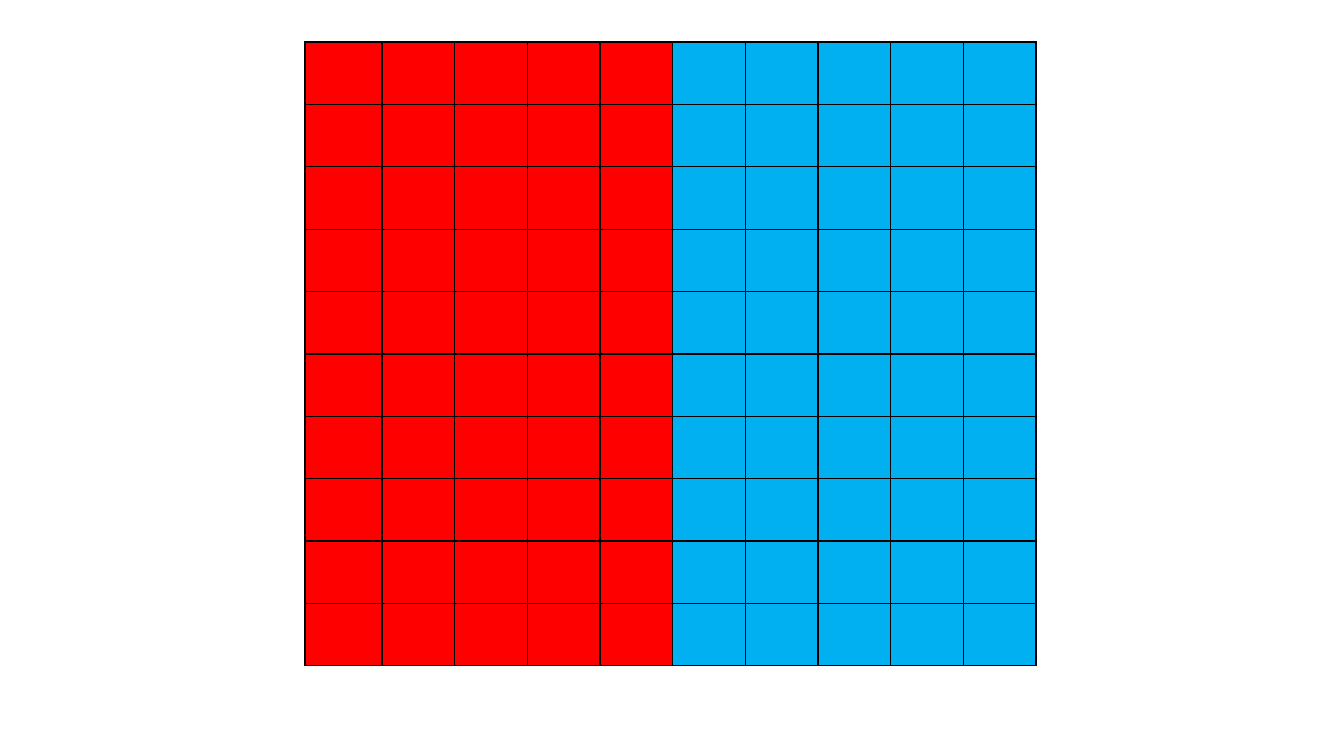
from lxml import etree
from pptx import Presentation
from pptx import util as u
from pptx.dml.color import RGBColor
from pptx.oxml import ns

RED = RGBColor(0xFF, 0x00, 0x00)
BLUE = RGBColor(0x00, 0xB0, 0xF0)
BLACK = RGBColor(0x00, 0x00, 0x00)
SIZE = 10
FIRST = 77


def px(n):
    """Turn pixels into EMU."""
    return u.Emu(round(n * 914400 / 100.8))


def edge(cell):
    """Draw a one-point black line on all four sides of a cell."""
    props = cell._tc.get_or_add_tcPr()
    for spot, side in enumerate(("a:lnL", "a:lnR", "a:lnT", "a:lnB")):
        line = etree.Element(ns.qn(side), w=str(u.Pt(1)))
        fill = etree.SubElement(line, ns.qn("a:solidFill"))
        etree.SubElement(fill, ns.qn("a:srgbClr"), val=str(BLACK))
        props.insert(spot, line)


def grid(slide, left, top, width, height):
    """Place the square table, its left half red and its right half blue."""
    frame = slide.shapes.add_table(SIZE, SIZE, px(left), px(top), px(width), px(height))
    table = frame.table
    table.first_row = table.horz_banding = False
    for col in table.columns:
        col.width = px((width - FIRST) / (SIZE - 1))
    table.columns[0].width = px(FIRST)
    for row in table.rows:
        for num, cell in enumerate(row.cells):
            cell.fill.solid()
            cell.fill.fore_color.rgb = RED if num < SIZE // 2 else BLUE
            cell.text_frame.paragraphs[0].font.name = "Calibri"
            edge(cell)


def main():
    """Build and save the slide."""
    deck = Presentation()
    deck.slide_width, deck.slide_height = px(1344), px(756)
    slide = deck.slides.add_slide(deck.slide_layouts[6])
    grid(slide, 305, 42, 731, 624)
    deck.save("out.pptx")


if __name__ == "__main__":
    main()
